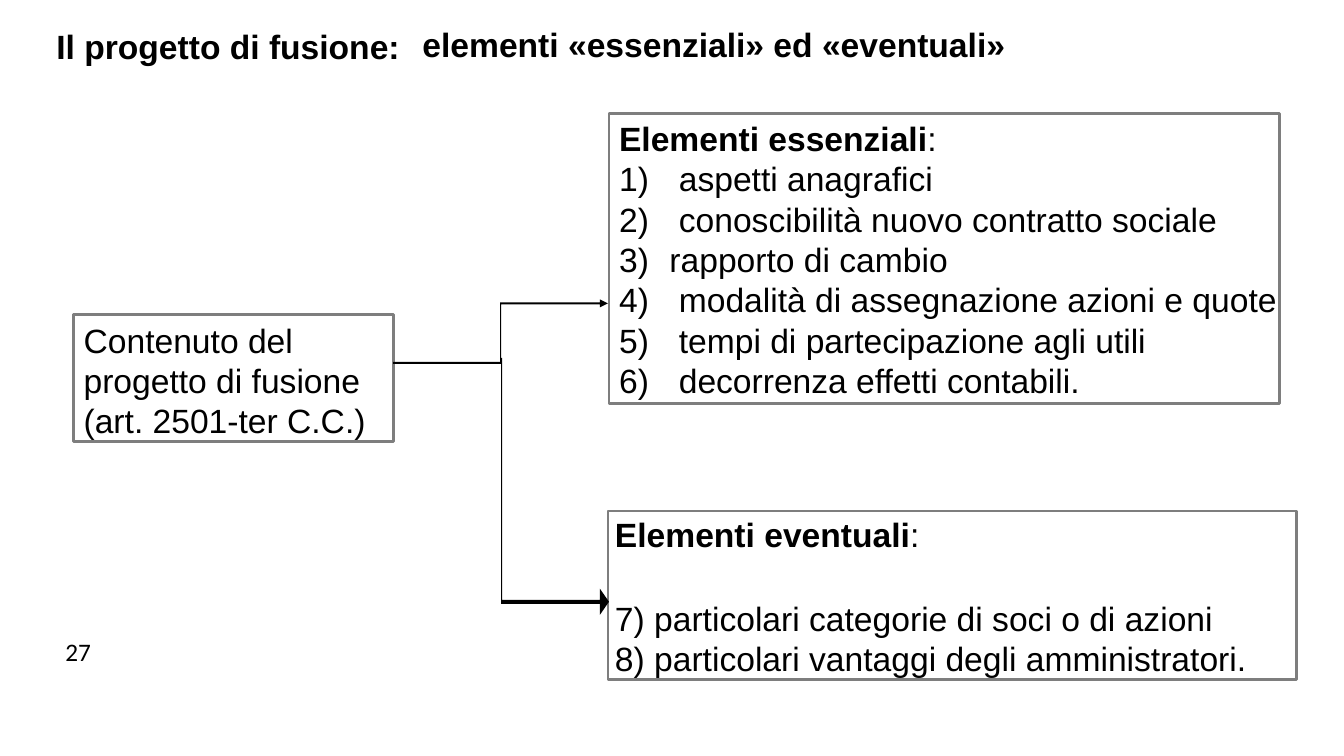
import pptx
import pptx.util
import pptx.dml.color
import pptx.enum.shapes
import pptx.enum.text
from lxml import etree

Pt = pptx.util.Pt
BLACK = pptx.dml.color.RGBColor(0x00, 0x00, 0x00)
GREY = pptx.dml.color.RGBColor(0x7E, 0x7E, 0x7E)
PX = 9144  # 100 px to the inch
LINE_HEIGHT = Pt(28.8)


def px(length):
    return pptx.util.Emu(length * PX)


def set_frame(frame, left=0, top=0, right=0, bottom=0):
    settings = {
        "margin_left": px(left), "margin_top": px(top),
        "margin_right": px(right), "margin_bottom": px(bottom),
        "word_wrap": True,
        "vertical_anchor": pptx.enum.text.MSO_ANCHOR.TOP,
    }
    for name, value in settings.items():
        setattr(frame, name, value)


def add_run(paragraph, text, size=24, font="Arial", bold=False):
    run = paragraph.add_run()
    run.text = text
    settings = {"size": Pt(size), "name": font, "bold": bold}
    for name, value in settings.items():
        setattr(run.font, name, value)
    run.font.color.rgb = BLACK


def format_paragraph(paragraph, indent, before=0, hanging=0):
    settings = {
        "alignment": pptx.enum.text.PP_ALIGN.LEFT,
        "space_before": Pt(before),
        "line_spacing": LINE_HEIGHT,
    }
    for name, value in settings.items():
        setattr(paragraph, name, value)
    properties = paragraph._p.get_or_add_pPr()
    properties.set("marL", str(px(indent + hanging)))
    properties.set("indent", str(-px(hanging)))


def number_paragraph(paragraph):
    numbering = etree.SubElement(
        paragraph._p.get_or_add_pPr(),
        pptx.oxml.ns.qn("a:buAutoNum"))
    numbering.set("type", "arabicParenR")


def title_part(slide, box, text, indent):
    frame = slide.shapes.add_textbox(*map(px, box)).text_frame
    set_frame(frame, top=1)
    heading = frame.paragraphs[0]
    format_paragraph(heading, indent, before=1)
    add_run(heading, text, bold=True)


def outlined_box(slide, box, top_margin):
    """Add a grey-bordered rectangle and return its text frame."""
    panel = slide.shapes.add_shape(
        pptx.enum.shapes.MSO_SHAPE.RECTANGLE, *map(px, box))
    panel.shadow.inherit = False
    panel.fill.background()
    panel.line.color.rgb = GREY
    panel.line.width = Pt(2.04)
    set_frame(panel.text_frame, top=top_margin)
    return panel.text_frame


def content_box(slide, box):
    content = outlined_box(slide, box, 5).paragraphs[0]
    format_paragraph(content, 10, before=3.2)
    add_run(content, "Contenuto del progetto di fusione (art. 2501-ter C.C.)")


def add_box_heading(frame, text, indent, before):
    heading = frame.paragraphs[0]
    format_paragraph(heading, indent, before)
    add_run(heading, text, bold=True)
    add_run(heading, ":")


def essential_box(slide, box, items):
    frame = outlined_box(slide, box, 4)
    add_box_heading(frame, "Elementi essenziali", 10, 3.1)
    for text in items:
        item = frame.add_paragraph()
        format_paragraph(item, 10, hanging=50)
        number_paragraph(item)
        add_run(item, text)


def optional_box(slide, box, items):
    frame = outlined_box(slide, box, 3)
    add_box_heading(frame, "Elementi eventuali", 7, 2.2)
    for position, text in enumerate(items):
        item = frame.add_paragraph()
        format_paragraph(item, 7, before=0 if position else 31)
        add_run(item, text)


def elbow_arrow(slide, box, outline):
    """Draw a solid elbow arrow; outline points are relative to the box."""
    left, top = box[:2]
    points = [(left + x, top + y) for x, y in outline]
    builder = slide.shapes.build_freeform(*points[0], scale=PX)
    builder.add_line_segments(points[1:], close=True)
    arrow = builder.convert_to_shape()
    arrow.shadow.inherit = False
    arrow.fill.solid()
    arrow.fill.fore_color.rgb = BLACK
    arrow.line.fill.background()


def page_number(slide, box, text):
    frame = slide.shapes.add_textbox(*map(px, box)).text_frame
    set_frame(frame, 10, 5, 10, 5)
    add_run(frame.paragraphs[0], text, size=18, font="Calibri")


def main():
    deck = pptx.Presentation()
    deck.slide_width, deck.slide_height = px(1333), px(750)
    slide = deck.slides.add_slide(deck.slide_layouts[6])

    title_part(slide, (55, 25, 1136, 42), "Il progetto di fusione:", 1)
    title_part(slide, (412, 23, 629, 42),
               "elementi «essenziali» ed «eventuali»", 7)
    content_box(slide, (73, 312, 317, 126))
    essential_box(slide, (604, 113, 665, 287), [
        " aspetti anagrafici",
        " conoscibilità nuovo contratto sociale",
        "rapporto di cambio",
        " modalità di assegnazione azioni e quote",
        " tempi di partecipazione agli utili",
        " decorrenza effetti contabili.",
    ])
    optional_box(slide, (603, 507, 683, 167), [
        "7) particolari categorie di soci o di azioni",
        "8) particolari vantaggi degli amministratori.",
    ])
    elbow_arrow(slide, (390, 297, 213, 64), [
        (0, 62), (106, 62), (106, 3), (205, 3), (205, 0), (213, 4),
        (205, 8), (205, 5), (107, 5), (107, 64), (0, 64),
    ])
    elbow_arrow(slide, (497, 355, 107, 255), [
        (0, 0), (1, 0), (1, 240), (98, 240), (98, 229), (107, 242),
        (98, 255), (98, 244), (0, 244),
    ])
    page_number(slide, (55, 626, 85, 40), "27")
    deck.save("out.pptx")


if __name__ == "__main__":
    main()
